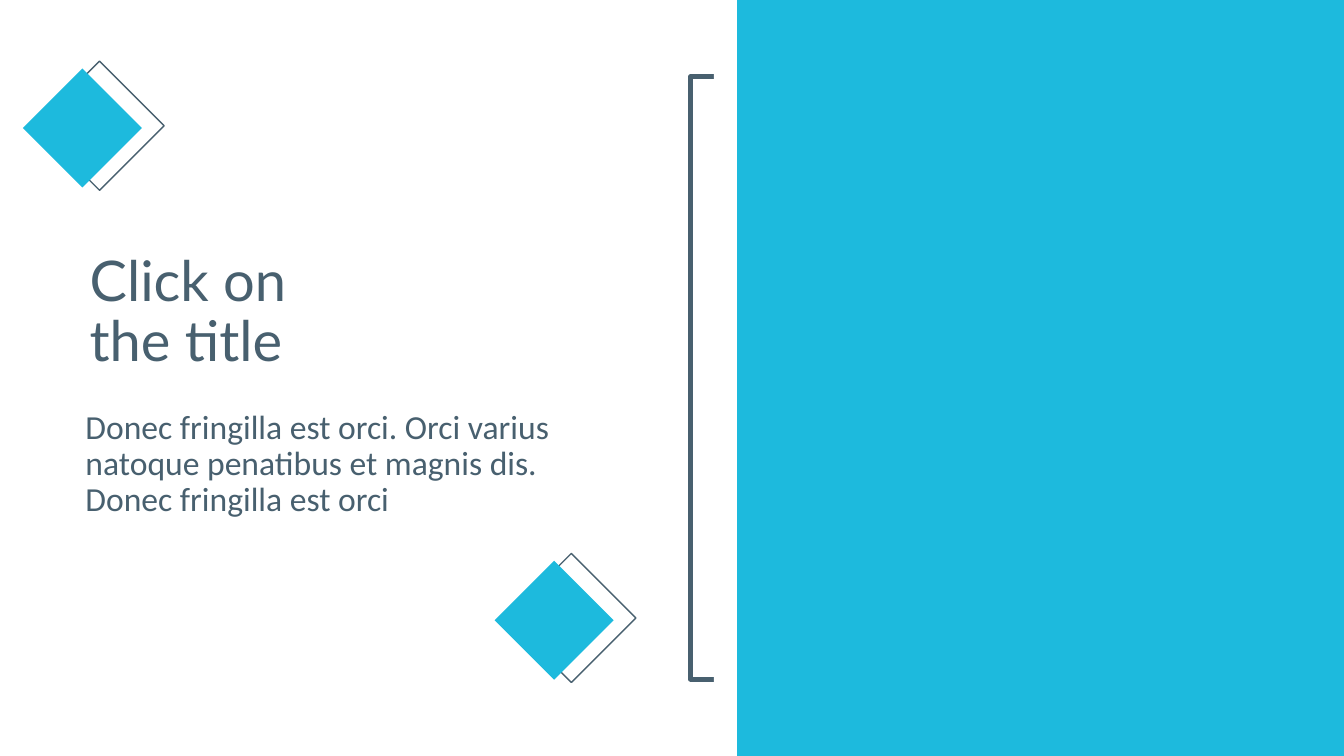
from pptx import Presentation
from pptx import util as u
from pptx.dml.color import RGBColor
from pptx.enum import shapes, text

SLATE = RGBColor(0x48, 0x60, 0x6F)
CYAN = RGBColor(0x1D, 0xBA, 0xDD)
WHITE = RGBColor(0xFF, 0xFF, 0xFF)

SLIDE_WIDTH, SLIDE_HEIGHT = 960, 540
PANEL_WIDTH = 433.5
PANEL_STEP = 16.65
RECTANGLE = shapes.MSO_SHAPE.RECTANGLE
DIAMOND = shapes.MSO_SHAPE.DIAMOND


def add_figure(page, kind, left, top, width, height, fill=None, line_width=None):
    """Add a preset shape, filled or outlined in slate."""
    figure = page.shapes.add_shape(
        kind, u.Pt(left), u.Pt(top), u.Pt(width), u.Pt(height))
    figure.shadow.inherit = False
    if fill is None:
        figure.fill.background()
    else:
        figure.fill.solid()
        figure.fill.fore_color.rgb = fill
    if line_width is None:
        figure.line.fill.background()
    else:
        figure.line.color.rgb = SLATE
        figure.line.width = u.Pt(line_width)


def add_diamond_pair(page, left, top):
    """Add an outlined diamond with a smaller cyan one over its left part."""
    add_figure(page, DIAMOND, left, top, 92.2, 92.2, line_width=1)
    add_figure(page, DIAMOND, left - 8.7, top + 5.2, 85, 85, fill=CYAN)


def add_words(page, words, left, top, width, height, font, size, anchor):
    """Add a wrapped text box with one slate paragraph."""
    box = page.shapes.add_textbox(
        u.Pt(left), u.Pt(top), u.Pt(width), u.Pt(height))
    frame = box.text_frame
    frame.word_wrap = True
    frame.vertical_anchor = anchor
    para = frame.paragraphs[0]
    para.text = words
    para.line_spacing = 0.9
    for span in para.runs:
        span.font.name = font
        span.font.size = u.Pt(size)
        span.font.color.rgb = SLATE


def main():
    deck = Presentation()
    deck.slide_width = u.Pt(SLIDE_WIDTH)
    deck.slide_height = u.Pt(SLIDE_HEIGHT)
    page = deck.slides.add_slide(deck.slide_layouts[6])

    # Right side: the white panel trims the frame to a bracket
    panel_left = SLIDE_WIDTH - PANEL_WIDTH
    add_figure(page, RECTANGLE, panel_left - 2 * PANEL_STEP, 54.7,
               PANEL_WIDTH, 430.6, line_width=3)
    add_figure(page, RECTANGLE, panel_left - PANEL_STEP, 0,
               PANEL_WIDTH, SLIDE_HEIGHT, fill=WHITE)
    add_figure(page, RECTANGLE, panel_left, 0,
               PANEL_WIDTH, SLIDE_HEIGHT, fill=CYAN)

    # Title and body
    add_words(page, "Click on \vthe title", 57, 177.8, 391.7, 92.2,
              "Lato", 40, text.MSO_ANCHOR.MIDDLE)
    add_words(page, "Donec fringilla est orci. Orci varius natoque penatibus "
              "et magnis dis. Donec fringilla est orci",
              54, 289.4, 391.7, 178.6, "Calibri", 24, text.MSO_ANCHOR.TOP)

    # Diamond ornaments
    for left, top in ((25, 43.7), (362, 395.3)):
        add_diamond_pair(page, left, top)

    deck.save("out.pptx")


if __name__ == "__main__":
    main()
